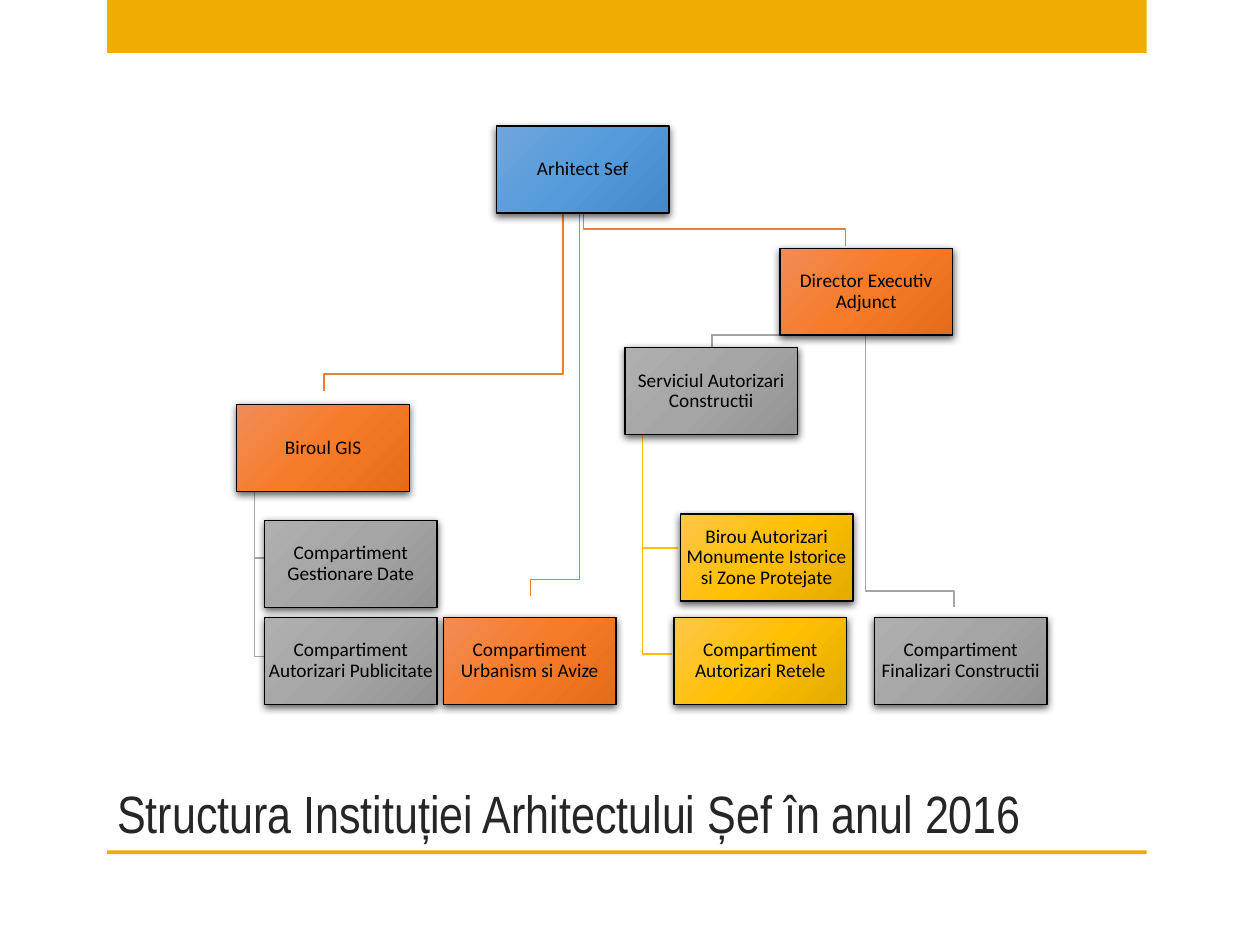
from pptx import Presentation
from pptx.dml.color import RGBColor
from pptx.enum.shapes import MSO_SHAPE
from pptx.enum.text import MSO_ANCHOR, MSO_AUTO_SIZE, PP_ALIGN
from pptx.oxml import parse_xml
from pptx.oxml.ns import nsdecls
from pptx.util import Inches, Pt

GOLD = "F0AD00"
BOX_WIDTH, BOX_HEIGHT = 1.37, 0.69
BOTTOM_ROW = 4.9

GRADIENTS = {
    "blue": ("71A6DB", "559BDB", "448ACA"),
    "orange": ("F18C57", "F67B28", "E56C19"),
    "gray": ("AFAFAF", "A5A5A5", "939393"),
    "yellow": ("FFC64B", "FFC000", "E3AB00"),
}
LINE_COLORS = {"orange": "ED7D31", "gray": "A5A5A5", "yellow": "FFC000"}

BOXES = [
    ("Arhitect Sef", 3.94, 1, "blue"),
    ("Compartiment Urbanism si Avize", 3.52, BOTTOM_ROW, "orange"),
    ("Biroul GIS", 1.88, 3.21, "orange"),
    ("Compartiment Gestionare Date", 2.1, 4.13, "gray"),
    ("Compartiment Autorizari Publicitate", 2.1, BOTTOM_ROW, "gray"),
    ("Director Executiv Adjunct", 6.19, 1.97, "orange"),
    ("Serviciul Autorizari Constructii", 4.96, 2.76, "gray"),
    ("Birou Autorizari Monumente Istorice si Zone Protejate", 5.4, 4.08, "yellow"),
    ("Compartiment Autorizari Retele", 5.35, BOTTOM_ROW, "yellow"),
    ("Compartiment Finalizari Constructii", 6.94, BOTTOM_ROW, "gray"),
]

BRANCHES = [
    ("gray", [(6.87, 2.66), (6.87, 4.69), (7.57, 4.69), (7.57, 4.82)]),
    ("yellow", [(5.1, 3.44), (5.1, 5.19), (5.33, 5.19)]),
    ("yellow", [(5.1, 3.44), (5.1, 4.35), (5.38, 4.35)]),
    ("gray", [(6.78, 2.66), (5.65, 2.66), (5.65, 2.75)]),
    ("orange", [(4.63, 1.69), (4.63, 1.82), (6.71, 1.82), (6.71, 1.95)]),
    ("gray", [(2.02, 3.9), (2.02, 5.21), (2.1, 5.21)]),
    ("gray", [(2.02, 3.9), (2.02, 4.43), (2.1, 4.43)]),
    ("orange", [(4.47, 1.69), (4.47, 2.97), (2.57, 2.97), (2.57, 3.1)]),
    ("orange", [(4.6, 1.69), (4.6, 4.6), (4.21, 4.6), (4.21, 4.73)]),
]


def color(hex_value):
    return RGBColor.from_string(hex_value)


def format_font(paragraph, name, size, hex_value):
    for run in paragraph.runs:
        run.font.name = name
        run.font.size = Pt(size)
        run.font.color.rgb = color(hex_value)


def add_rectangle(slide, left, top, width, height):
    shape = slide.shapes.add_shape(
        MSO_SHAPE.RECTANGLE, Inches(left), Inches(top), Inches(width), Inches(height)
    )
    shape.shadow.inherit = False
    return shape


def add_bar(slide, top, height):
    bar = add_rectangle(slide, 0.85, top, 8.25, height)
    bar.fill.solid()
    bar.fill.fore_color.rgb = color(GOLD)
    bar.line.fill.background()


def set_gradient(shape, hex_values):
    """Fill the shape with a gradient that spreads from its top left corner."""
    stops = "".join(
        f'<a:gs pos="{index * 50000}"><a:srgbClr val="{value}"/></a:gs>'
        for index, value in enumerate(hex_values)
    )
    gradient = parse_xml(
        f'<a:gradFill {nsdecls("a")} rotWithShape="1"><a:gsLst>{stops}</a:gsLst>'
        '<a:path path="circle"><a:fillToRect r="100000" b="100000"/></a:path>'
        "</a:gradFill>"
    )
    shape._element.spPr.prstGeom.addnext(gradient)


def set_shadow(shape):
    """Put a soft shadow just below the shape."""
    effects = shape._element.spPr.find("{*}effectLst")
    effects.append(parse_xml(
        f'<a:outerShdw {nsdecls("a")} blurRad="{Pt(4.5)}" dist="{Pt(1.5)}" '
        'dir="5400000" algn="ctr" rotWithShape="0"><a:srgbClr val="000000">'
        '<a:alpha val="63000"/></a:srgbClr></a:outerShdw>'
    ))


def add_box(slide, text, left, top, color_name):
    box = add_rectangle(slide, left, top, BOX_WIDTH, BOX_HEIGHT)
    set_gradient(box, GRADIENTS[color_name])
    box.line.color.rgb = color("000000")
    box.line.width = Pt(0.75)
    set_shadow(box)

    text_frame = box.text_frame
    text_frame.text = text
    text_frame.word_wrap = True
    text_frame.vertical_anchor = MSO_ANCHOR.MIDDLE
    text_frame.margin_left = text_frame.margin_right = Inches(0.01)
    text_frame.margin_top = text_frame.margin_bottom = Inches(0.01)
    paragraph = text_frame.paragraphs[0]
    paragraph.alignment = PP_ALIGN.CENTER
    paragraph.line_spacing = 0.9
    format_font(paragraph, "Calibri", 11, "000000")


def add_branch(slide, color_name, points):
    start, *others = [(Inches(x), Inches(y)) for x, y in points]
    builder = slide.shapes.build_freeform(*start)
    builder.add_line_segments(others, close=False)
    branch = builder.convert_to_shape()
    branch.shadow.inherit = False
    branch.fill.background()
    branch.line.color.rgb = color(LINE_COLORS[color_name])
    branch.line.width = Pt(1)


def set_title(slide, text):
    title = slide.shapes.title
    title.left, title.top = Inches(0.83), Inches(6.08)
    title.width, title.height = Inches(8.58), Inches(0.67)
    text_frame = title.text_frame
    text_frame.text = text
    text_frame.word_wrap = True
    text_frame.auto_size = MSO_AUTO_SIZE.NONE
    text_frame.vertical_anchor = MSO_ANCHOR.BOTTOM
    paragraph = text_frame.paragraphs[0]
    paragraph.alignment = PP_ALIGN.LEFT
    format_font(paragraph, "Arial Narrow", 30, "262626")


def main():
    presentation = Presentation()
    presentation.slide_width, presentation.slide_height = Inches(10), Inches(7.5)
    slide = presentation.slides.add_slide(presentation.slide_layouts[5])

    add_bar(slide, 0, 0.42)
    add_bar(slide, 6.75, 0.03)
    set_title(slide, "Structura Instituției Arhitectului Șef în anul 2016")
    for branch in BRANCHES:
        add_branch(slide, *branch)
    for box in BOXES:
        add_box(slide, *box)

    presentation.save("out.pptx")


if __name__ == "__main__":
    main()
